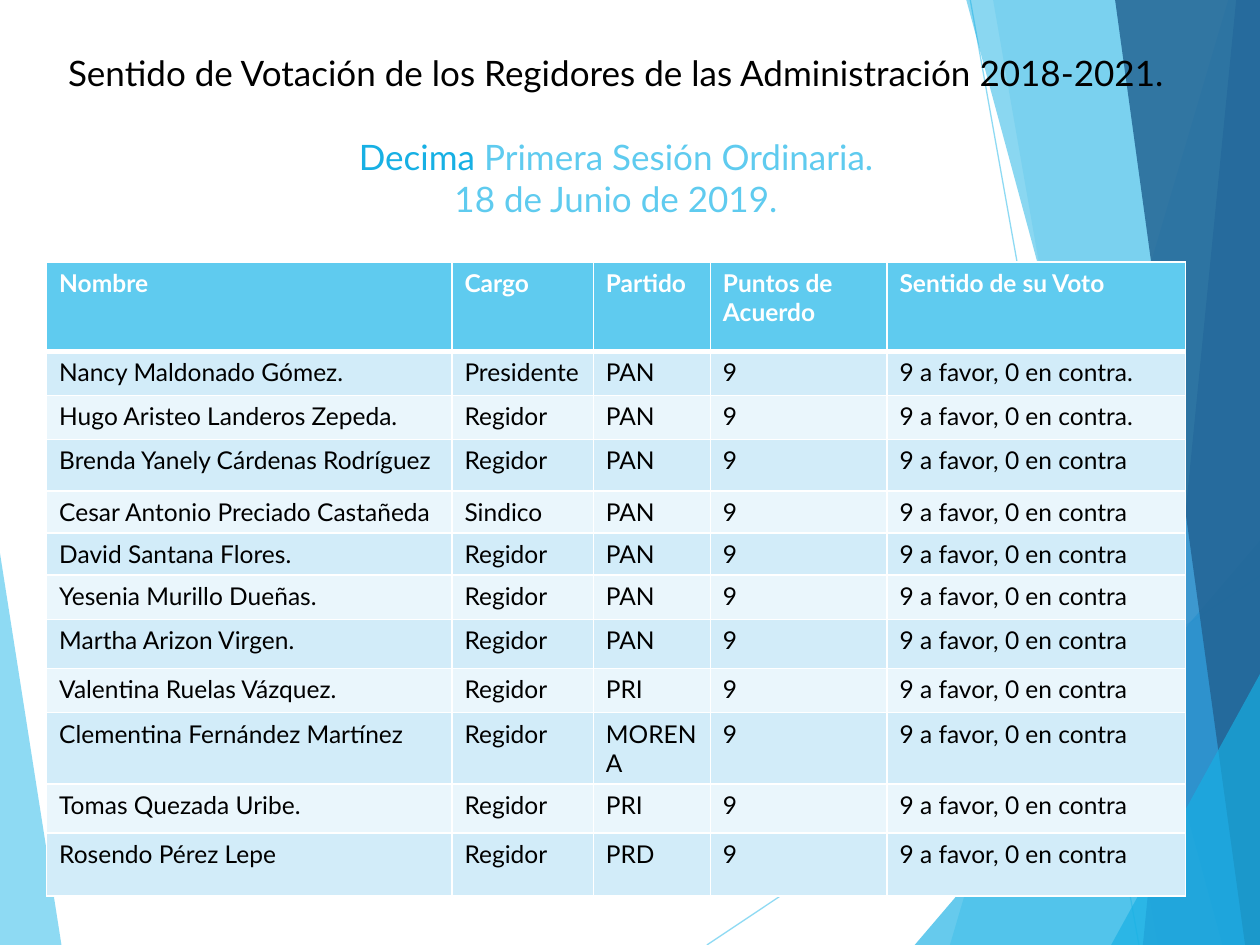
"""Build the council voting record slide with its faceted backdrop and table."""
from lxml import etree
from pptx import Presentation
from pptx.dml.color import RGBColor
from pptx.enum.text import MSO_ANCHOR, MSO_AUTO_SIZE, PP_ALIGN
from pptx.oxml.ns import qn
from pptx.util import Cm, Pt

TOP = MSO_ANCHOR.TOP
NO_AUTOFIT = MSO_AUTO_SIZE.NONE
CENTER = PP_ALIGN.CENTER

BLACK = RGBColor(0x00, 0x00, 0x00)
WHITE = RGBColor(0xFF, 0xFF, 0xFF)
SKY = RGBColor(0x5F, 0xCB, 0xEF)
CYAN = RGBColor(0x17, 0xB0, 0xE4)
BLUE = RGBColor(0x2E, 0x83, 0xC3)
NAVY = RGBColor(0x22, 0x62, 0x92)
BAND_DARK = RGBColor(0xD2, 0xEC, 0xF9)
BAND_LIGHT = RGBColor(0xEA, 0xF6, 0xFC)

TITLE_FONT = {"name": "Lato", "size": Pt(20), "bold": False}
HEADER_FONT = {"name": "Lato", "size": Pt(14), "bold": True}
BODY_FONT = {"name": "Lato", "size": Pt(14), "bold": False}

WIDTH, HEIGHT = 25.4, 19.05

RAYS = [(14.25, HEIGHT, WIDTH, 11.61), (19.56, 0, 22.96, HEIGHT)]
LEFT_FACET = ([(0, 11.15), (1.24, HEIGHT), (0, HEIGHT)], SKY, 70)
RIGHT_FACETS = [
    ([(24.76, 0), (19.15, HEIGHT), (WIDTH, HEIGHT), (WIDTH, 0)], SKY, 36),
    ([(20.02, 0), (23.34, HEIGHT), (WIDTH, HEIGHT), (WIDTH, 0)], SKY, 20),
    ([(18.44, HEIGHT), (WIDTH, 10.9), (WIDTH, HEIGHT)], CYAN, 66),
    ([(19.48, 0), (24.64, HEIGHT), (WIDTH, HEIGHT), (WIDTH, 0)], CYAN, 50),
    ([(24.92, 0), (23.04, HEIGHT), (WIDTH, HEIGHT), (WIDTH, 0)], BLUE, 70),
    ([(22.48, 0), (25.1, HEIGHT), (WIDTH, HEIGHT), (WIDTH, 0)], NAVY, 82),
    ([(22.4, HEIGHT), (WIDTH, 13.59), (WIDTH, HEIGHT)], CYAN, 66),
]

HEADERS = ("Nombre", "Cargo", "Partido", "Puntos de Acuerdo", "Sentido de su Voto")
COLUMN_WIDTHS = (8.17, 2.85, 2.36, 3.56, 6.02)
HEADER_HEIGHT = 1.8
MEMBERS = [
    ("Nancy Maldonado Gómez.", "Presidente", "PAN", "9 a favor, 0 en contra.", 0.89),
    ("Hugo Aristeo Landeros Zepeda.", "Regidor", "PAN", "9 a favor, 0 en contra.", 0.89),
    ("Brenda Yanely Cárdenas Rodríguez", "Regidor", "PAN", "9 a favor, 0 en contra", 1.04),
    ("Cesar Antonio Preciado Castañeda", "Sindico", "PAN", "9 a favor, 0 en contra", 0.84),
    ("David Santana Flores.", "Regidor", "PAN", "9 a favor, 0 en contra", 0.79),
    ("Yesenia Murillo Dueñas.", "Regidor", "PAN", "9 a favor, 0 en contra", 0.89),
    ("Martha Arizon Virgen.", "Regidor", "PAN", "9 a favor, 0 en contra", 0.99),
    ("Valentina Ruelas Vázquez.", "Regidor", "PRI", "9 a favor, 0 en contra", 0.89),
    ("Clementina Fernández Martínez", "Regidor", "MORENA", "9 a favor, 0 en contra", 0.89),
    ("Tomas Quezada Uribe.", "Regidor", "PRI", "9 a favor, 0 en contra", 0.99),
    ("Rosendo Pérez Lepe", "Regidor", "PRD", "9 a favor, 0 en contra", 1.27),
]


def format_font(font, values, color):
    for name, value in values.items():
        setattr(font, name, value)
    font.color.rgb = color


def set_opacity(shape, percent):
    for color in shape.element.spPr.iter(qn("a:srgbClr")):
        etree.SubElement(color, qn("a:alpha"), val=str(percent * 1000))


presentation = Presentation()
presentation.slide_width = Cm(WIDTH)
presentation.slide_height = Cm(HEIGHT)
slide = presentation.slides.add_slide(presentation.slide_layouts[5])
title = slide.shapes.title

for ray in RAYS:
    connector = slide.shapes.add_connector(1, *[Cm(value) for value in ray])
    connector.line.color.rgb = SKY
    connector.line.width = Pt(0.75)
    set_opacity(connector, 70)
    etree.SubElement(connector.element.spPr, qn("a:effectLst"))

for points, color, opacity in [LEFT_FACET] + RIGHT_FACETS:
    corners = [(Cm(x), Cm(y)) for x, y in points]
    builder = slide.shapes.build_freeform(*corners[0])
    builder.add_line_segments(corners[1:], close=True)
    facet = builder.convert_to_shape()
    facet.shadow.inherit = False
    facet.fill.solid()
    facet.fill.fore_color.rgb = color
    facet.line.fill.background()
    set_opacity(facet, opacity)

rows = [HEADERS] + [(name, post, party, "9", vote) for name, post, party, vote, height in MEMBERS]
row_heights = [HEADER_HEIGHT] + [member[-1] for member in MEMBERS]
table = slide.shapes.add_table(
    len(rows), len(HEADERS), Cm(0.94), Cm(5.28), Cm(sum(COLUMN_WIDTHS)), Cm(sum(row_heights))
).table
for column, width in zip(table.columns, COLUMN_WIDTHS):
    column.width = Cm(width)

for row_index, (texts, height) in enumerate(zip(rows, row_heights)):
    table.rows[row_index].height = Cm(height)
    is_header = row_index == 0
    band = SKY if is_header else (BAND_LIGHT, BAND_DARK)[row_index % 2]
    for column_index, text in enumerate(texts):
        cell = table.cell(row_index, column_index)
        cell.text = text
        font = cell.text_frame.paragraphs[0].runs[0].font
        format_font(font, HEADER_FONT if is_header else BODY_FONT, WHITE if is_header else BLACK)
        properties = cell._tc.get_or_add_tcPr()
        for side in ("lnL", "lnR", "lnT", "lnB"):
            heavy = (side == "lnB" and is_header) or (side == "lnT" and row_index == 1)
            border = etree.SubElement(properties, qn(f"a:{side}"), w=str(Pt(3 if heavy else 1)))
            border_fill = etree.SubElement(border, qn("a:solidFill"))
            etree.SubElement(border_fill, qn("a:srgbClr"), val=str(WHITE))
        cell.fill.solid()
        cell.fill.fore_color.rgb = band

title.element.getparent().append(title.element)
title_box = {"left": Cm(0.94), "top": Cm(0.91), "width": Cm(22.96), "height": Cm(4.37)}
for name, value in title_box.items():
    setattr(title, name, value)
text_frame = title.text_frame
text_frame.word_wrap = True
text_frame.auto_size = NO_AUTOFIT
text_frame.vertical_anchor = TOP

heading = text_frame.paragraphs[0]
session = text_frame.add_paragraph()
session.space_before = Pt(24)
for paragraph, text, color in (
    (heading, "Sentido de Votación de los Regidores de las Administración 2018-2021.", BLACK),
    (session, "Decima", CYAN),
    (session, " Primera Sesión Ordinaria.", SKY),
    (session, "18 de Junio de 2019.", SKY),
):
    paragraph.alignment = CENTER
    if text.startswith("18"):
        paragraph.add_line_break()
    run = paragraph.add_run()
    run.text = text
    format_font(run.font, TITLE_FONT, color)

presentation.save("out.pptx")
